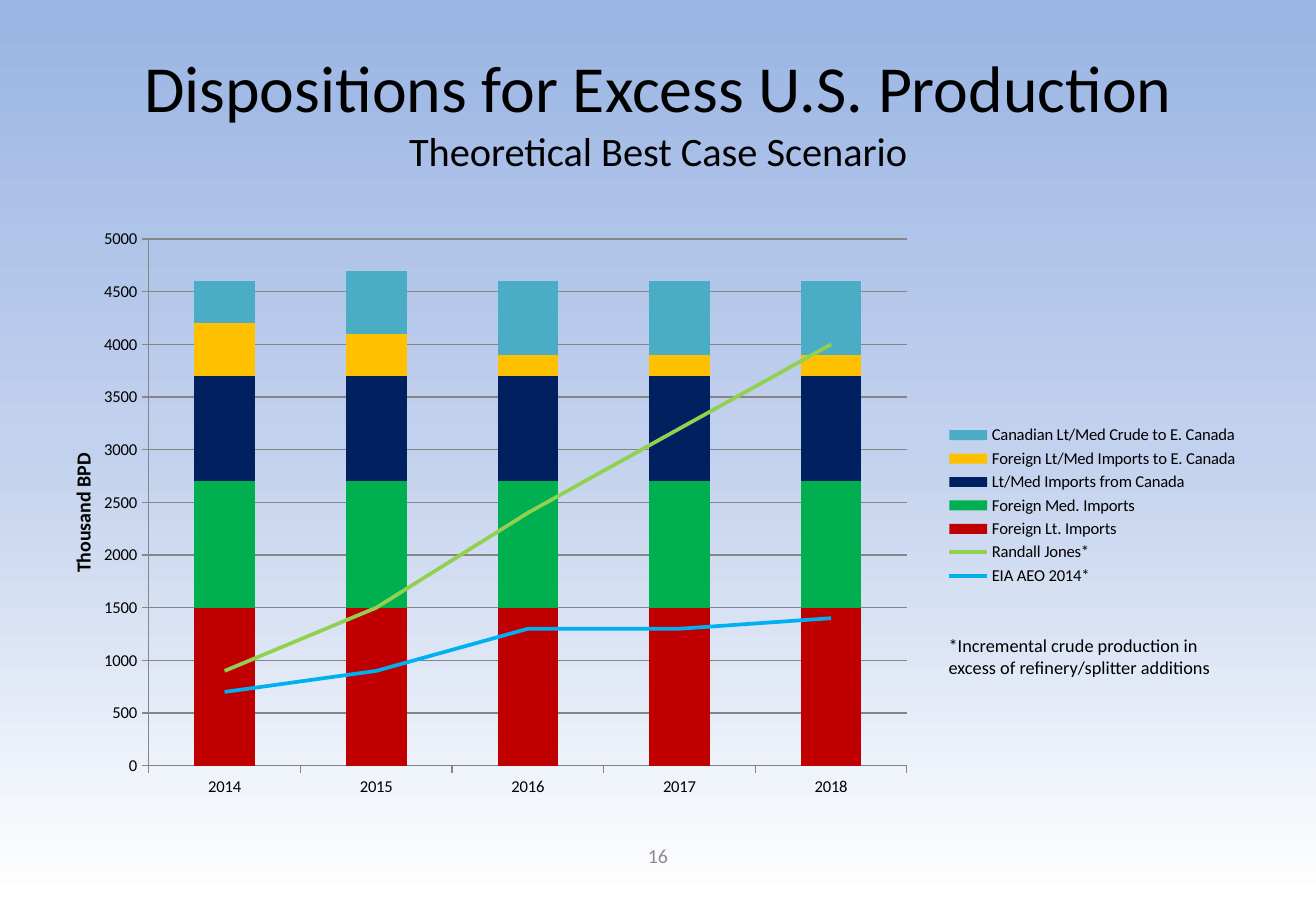
from typing import NamedTuple

from lxml.etree import SubElement as Sub
from pptx import Presentation
from pptx.chart.data import CategoryChartData as Data
from pptx.dml.color import RGBColor as Rgb
from pptx.enum.chart import XL_CHART_TYPE as Kind, XL_LEGEND_POSITION as Side
from pptx.enum.chart import XL_MARKER_STYLE as Mark, XL_TICK_MARK as Tick
from pptx.enum.text import MSO_ANCHOR as Anchor, MSO_AUTO_SIZE as Fit, PP_ALIGN as Align
from pptx.oxml.ns import qn
from pptx.util import Cm, Pt

FONT = "Calibri"
HUES = {
    "black": "000000", "gray": "8C8C8C", "grid": "868686",
    "red": "C00000", "green": "00B050", "navy": "002060", "gold": "FFC000",
    "teal": "4BACC6", "lime": "92D050", "sky": "00B0F0",
    "top": "9AB5E4", "mid": "C2D1ED", "base": "FFFFFF",
}
YEARS = ("2014", "2015", "2016", "2017", "2018")


class Row(NamedTuple):
    name: str
    vals: tuple
    hue: str


class Note(NamedTuple):
    text: str
    box: tuple
    size: int
    hue: str
    align: Align
    anchor: Anchor


BARS = (
    Row("Foreign Lt. Imports", (1500,) * 5, "red"),
    Row("Foreign Med. Imports", (1200,) * 5, "green"),
    Row("Lt/Med Imports from Canada", (1000,) * 5, "navy"),
    Row("Foreign Lt/Med Imports to E. Canada", (500, 400, 200, 200, 200), "gold"),
    Row("Canadian Lt/Med Crude to E. Canada", (400, 600, 700, 700, 700), "teal"),
)
LINES = (
    Row("Randall Jones*", (900, 1500, 2400, 3200, 4000), "lime"),
    Row("EIA AEO 2014*", (700, 900, 1300, 1300, 1400), "sky"),
)
NOTES = (
    Note("*Incremental crude production in excess of refinery/splitter additions",
         (19.89, 13.34, 6.15, 1.7), 11, "black", Align.LEFT, Anchor.TOP),
    Note("16", (9.55, 17.65, 8.84, 1.02), 12, "gray", Align.CENTER, Anchor.MIDDLE),
)


def tint(hue: str) -> Rgb:
    return Rgb.from_string(HUES[hue])


def style(font, size: float, hue: str = "black") -> None:
    font.name, font.size = FONT, Pt(size)
    font.color.rgb = tint(hue)


def paint_back(slide) -> None:
    fill = slide.background.fill
    fill.gradient()
    fill.gradient_angle = 270
    stops = slide.element.find(".//" + qn("a:gsLst"))
    for stop in list(stops):
        stops.remove(stop)
    for pos, hue in ((0, "top"), (50, "mid"), (100, "base")):
        stop = Sub(stops, qn("a:gs"), pos=str(pos * 1000))
        Sub(stop, qn("a:srgbClr"), val=HUES[hue])


def set_title(slide) -> None:
    title = slide.shapes.title
    title.left, title.top, title.width, title.height = map(Cm, (1.4, 0.76, 25.15, 3.18))
    frame = title.text_frame
    frame.auto_size, frame.vertical_anchor = Fit.NONE, Anchor.MIDDLE
    para = frame.paragraphs[0]
    para.alignment = Align.CENTER
    head = para.add_run()
    head.text = "Dispositions for Excess U.S. Production"
    style(head.font, 39.6)
    para.add_line_break()
    sub = para.add_run()
    sub.text = "Theoretical Best Case Scenario"
    style(sub.font, 24.3)


def split_lines(chart) -> None:
    """Move the last series from the bars to a line plot on the same axes."""
    bar = chart.plots[0]
    old = bar.series[0]._element.getparent()
    moved = old.findall(qn("c:ser"))[len(BARS):]
    plot = old.makeelement(qn("c:lineChart"))
    old.addnext(plot)
    Sub(plot, qn("c:grouping"), val="standard")
    Sub(plot, qn("c:varyColors"), val="0")
    for ser in moved:
        for flag in ser.findall(qn("c:invertIfNegative")):
            ser.remove(flag)
        plot.append(ser)
    Sub(plot, qn("c:marker"), val="1")
    for axis in old.findall(qn("c:axId")):
        Sub(plot, qn("c:axId"), val=axis.get("val"))


def place_plot(chart) -> None:
    """Fix the inner plot area as fractions of the chart."""
    area = chart._chartSpace.find(".//" + qn("c:plotArea"))
    for old in area.findall(qn("c:layout")):
        area.remove(old)
    layout = area.makeelement(qn("c:layout"))
    area.insert(0, layout)
    manual = Sub(layout, qn("c:manualLayout"))
    parts = (("layoutTarget", "inner"), ("xMode", "edge"), ("yMode", "edge"),
             ("x", "0.07"), ("y", "0.05"), ("w", "0.64"), ("h", "0.89"))
    for tag, val in parts:
        Sub(manual, qn("c:" + tag), val=val)


def add_chart(slide) -> None:
    data = Data()
    data.categories = YEARS
    for row in BARS + LINES:
        data.add_series(row.name, row.vals)
    chart = slide.shapes.add_chart(
        Kind.COLUMN_STACKED, *map(Cm, (1.4, 4.45, 25.15, 12.57)), data).chart
    style(chart.font, 10)
    chart.has_title = False
    split_lines(chart)
    place_plot(chart)

    # Series
    bars, lines = chart.plots
    bars.gap_width, bars.overlap = 150, 100
    bars.vary_by_categories = False
    for ser, row in zip(bars.series, BARS):
        ser.format.fill.solid()
        ser.format.fill.fore_color.rgb = tint(row.hue)
    for ser, row in zip(lines.series, LINES):
        ser.format.line.color.rgb = tint(row.hue)
        ser.format.line.width = Pt(2.25)
        ser.marker.style = Mark.NONE
        ser.smooth = False

    # Axes
    years, scale = chart.category_axis, chart.value_axis
    scale.minimum_scale, scale.maximum_scale, scale.major_unit = 0, 5000, 500
    scale.has_major_gridlines = True
    for part in (years, scale, scale.major_gridlines):
        part.format.line.color.rgb = tint("grid")
        part.format.line.width = Pt(0.75)
    for axis in (years, scale):
        axis.major_tick_mark = Tick.OUTSIDE
    para = scale.axis_title.text_frame.paragraphs[0]
    para.add_run().text = "Thousand BPD"
    style(para.font, 12)
    para.font.bold = True

    # Legend
    chart.has_legend = True
    chart.legend.position = Side.RIGHT
    chart.legend.include_in_layout = False
    style(chart.legend.font, 10)


def add_note(slide, note: Note) -> None:
    frame = slide.shapes.add_textbox(*map(Cm, note.box)).text_frame
    frame.word_wrap, frame.vertical_anchor = True, note.anchor
    para = frame.paragraphs[0]
    para.text, para.alignment = note.text, note.align
    style(para.font, note.size, note.hue)


def main() -> None:
    deck = Presentation()
    deck.slide_width, deck.slide_height = Cm(27.94), Cm(19.05)
    slide = deck.slides.add_slide(deck.slide_layouts[5])
    paint_back(slide)
    set_title(slide)
    add_chart(slide)
    for note in NOTES:
        add_note(slide, note)
    deck.save("out.pptx")


if __name__ == "__main__":
    main()
